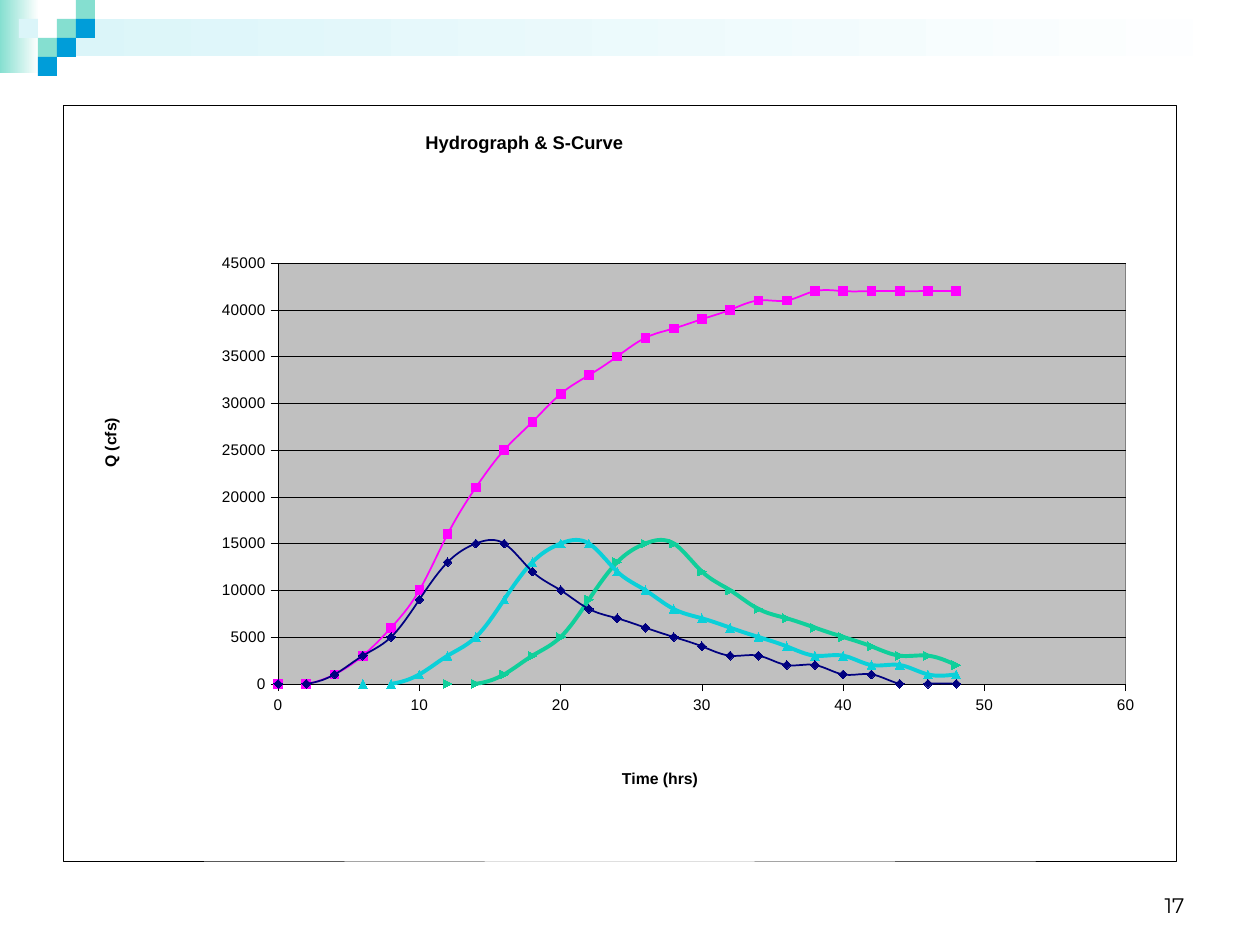
from pptx import Presentation
from pptx.chart.data import XyChartData
from pptx.dml.color import RGBColor
from pptx.enum.chart import XL_CHART_TYPE, XL_MARKER_STYLE, XL_TICK_MARK
from pptx.enum.shapes import MSO_SHAPE
from pptx.enum.text import MSO_ANCHOR, PP_ALIGN
from pptx.oxml import parse_xml
from pptx.oxml.ns import nsdecls, qn
from pptx.util import Emu, Pt

PX = 914400 / 126
FONT = "Arial"
PAGE_NUMBER = "17"
TITLE = "Hydrograph & S-Curve"
CHART_WIDTH, CHART_HEIGHT = 1113, 756
STEP_HOURS = 2
LAG = 3  # readings between one storm and the next

HYDROGRAPH = [0, 0, 1000, 3000, 5000, 9000, 13000, 15000, 15000, 12000, 10000, 8000, 7000,
              6000, 5000, 4000, 3000, 3000, 2000, 2000, 1000, 1000, 0, 0, 0]
S_CURVE = [0, 0, 1000, 3000, 6000, 10000, 16000, 21000, 25000, 28000, 31000, 33000, 35000,
           37000, 38000, 39000, 40000, 41000, 41000, 42000, 42000, 42000, 42000, 42000, 42000]

# name, flows, readings of delay, colour, line width, marker (None leaves it automatic)
SERIES = [
    ("Series 1", HYDROGRAPH, 0, "000080", 1, XL_MARKER_STYLE.DIAMOND),
    ("Series 2", S_CURVE, 0, "FF00FF", 1, XL_MARKER_STYLE.SQUARE),
    ("Series 3", HYDROGRAPH, LAG, "0BD0D9", 2.25, None),
    ("Series 4", HYDROGRAPH, 2 * LAG, "10CF9B", 2.25, None),
]

# left, top, width, height, left colour, right colour
BANDS = [(0, 0, 39, 73, "85DFD0", "FFFFFF"), (57, 19, 1203, 37, "DBF5F9", "FFFFFF")]
# column, row, colour
SQUARE = 19
SQUARES = [(3, 1, "85DFD0"), (4, 0, "85DFD0"), (4, 1, "009DD9"), (2, 2, "85DFD0"),
           (1, 1, "DBF5F9"), (3, 2, "009DD9"), (2, 3, "009DD9")]


def px(length):
    return Emu(round(length * PX))


def color(value):
    return RGBColor.from_string(value)


def add_rect(slide, left, top, width, height):
    rect = slide.shapes.add_shape(MSO_SHAPE.RECTANGLE, px(left), px(top), px(width), px(height))
    rect.shadow.inherit = False
    rect.line.fill.background()
    return rect


def add_decoration(slide):
    for left, top, width, height, start, end in BANDS:
        fill = add_rect(slide, left, top, width, height).fill
        fill.gradient()
        fill.gradient_angle = 0
        for stop, value, position in zip(fill.gradient_stops, (start, end), (0, 1)):
            stop.color.rgb = color(value)
            stop.position = position
    for column, row, value in SQUARES:
        fill = add_rect(slide, column * SQUARE, row * SQUARE, SQUARE, SQUARE).fill
        fill.solid()
        fill.fore_color.rgb = color(value)


def area_format(fill, line):
    return parse_xml(
        f'<c:spPr {nsdecls("c", "a")}><a:solidFill><a:srgbClr val="{fill}"/></a:solidFill>'
        f'<a:ln w="3175"><a:solidFill><a:srgbClr val="{line}"/></a:solidFill></a:ln></c:spPr>')


def set_layout(element, left, top, size=None):
    """Place a title or the plot area, in px from the chart's corner."""
    for old in element.findall(qn("c:layout")):
        element.remove(old)
    values = [("xMode", "edge"), ("yMode", "edge"),
              ("x", left / CHART_WIDTH), ("y", top / CHART_HEIGHT)]
    if size:
        width, height = size
        values = [("layoutTarget", "inner"), *values,
                  ("w", width / CHART_WIDTH), ("h", height / CHART_HEIGHT)]
    settings = "".join(f'<c:{tag} val="{value}"/>' for tag, value in values)
    layout = parse_xml(f'<c:layout {nsdecls("c")}><c:manualLayout>{settings}'
                       '</c:manualLayout></c:layout>')
    text = element.find(qn("c:tx"))
    if text is None:
        element.insert(0, layout)
    else:
        text.addnext(layout)


def set_font(font, size, bold=False):
    font.name = FONT
    font.size = Pt(size)
    font.bold = bold
    font.color.rgb = color("000000")


def set_title(title, text, size, left, top):
    title.text_frame.text = text
    set_font(title.text_frame.paragraphs[0].runs[0].font, size, bold=True)
    set_layout(title._element, left, top)


def set_line(line, value, width):
    line.color.rgb = color(value)
    line.width = Pt(width)


def style_axis(axis, text, maximum, unit, left, top):
    axis.minimum_scale, axis.maximum_scale, axis.major_unit = 0, maximum, unit
    axis.major_tick_mark = XL_TICK_MARK.OUTSIDE
    axis.minor_tick_mark = XL_TICK_MARK.NONE
    axis.tick_labels.number_format = "General"
    axis.tick_labels.number_format_is_linked = False
    set_font(axis.tick_labels.font, 8.8)
    set_line(axis.format.line, "000000", 0.25)
    set_title(axis.axis_title, text, 9, left, top)


def hydrograph_data():
    data = XyChartData()
    for name, flows, delay, *_ in SERIES:
        series = data.add_series(name)
        delayed = [0] * delay + flows[:len(flows) - delay]
        for index, flow in enumerate(delayed):
            series.add_data_point(index * STEP_HOURS, flow)
    return data


def blank_first_points(series, count):
    """Leave the readings before a delayed storm without a value."""
    for point in list(series._element.find(qn("c:yVal")).iter(qn("c:pt")))[:count]:
        point.getparent().remove(point)


def add_hydrograph_chart(slide):
    chart = slide.shapes.add_chart(XL_CHART_TYPE.XY_SCATTER_SMOOTH, px(63), px(105),
                                   px(CHART_WIDTH), px(CHART_HEIGHT), hydrograph_data()).chart
    chart.has_legend = False
    set_font(chart.font, 8.8)
    chart.has_title = True
    set_title(chart.chart_title, TITLE, 10.5, 359, 22)

    style_axis(chart.category_axis, "Time (hrs)", 60, 10, 556, 661)
    style_axis(chart.value_axis, "Q (cfs)", 45000, 5000, 34, 310)
    chart.category_axis.has_major_gridlines = False
    chart.value_axis.has_major_gridlines = True
    set_line(chart.value_axis.major_gridlines.format.line, "000000", 0.25)

    for series, (_, _, delay, value, width, marker) in zip(chart.plots[0].series, SERIES):
        blank_first_points(series, delay)
        series._element.get_or_add_smooth().val = True
        set_line(series.format.line, value, width)
        if marker is not None:
            series.marker.style = marker
            series.marker.size = 5
            series.marker.format.fill.solid()
            series.marker.format.fill.fore_color.rgb = color(value)
            set_line(series.marker.format.line, value, 0.75)

    chart_part = chart._chartSpace.find(qn("c:chart"))
    chart_part.addnext(area_format("FFFFFF", "000000"))
    plot_area = chart_part.find(qn("c:plotArea"))
    set_layout(plot_area, 215, 158, size=(848, 421))
    plot_area.append(area_format("C0C0C0", "808080"))


def add_page_number(slide):
    frame = slide.shapes.add_textbox(px(903), px(861), px(294), px(63)).text_frame
    frame.word_wrap = True
    frame.vertical_anchor = MSO_ANCHOR.BOTTOM
    frame.text = PAGE_NUMBER
    paragraph = frame.paragraphs[0]
    paragraph.alignment = PP_ALIGN.RIGHT
    font = paragraph.runs[0].font
    font.name = "Montserrat"
    font.size = Pt(12)
    font.color.rgb = color("000000")


def main():
    presentation = Presentation()
    presentation.slide_width, presentation.slide_height = px(1260), px(945)
    slide = presentation.slides.add_slide(presentation.slide_layouts[6])
    add_decoration(slide)
    add_page_number(slide)
    add_hydrograph_chart(slide)
    presentation.save("out.pptx")


if __name__ == "__main__":
    main()
